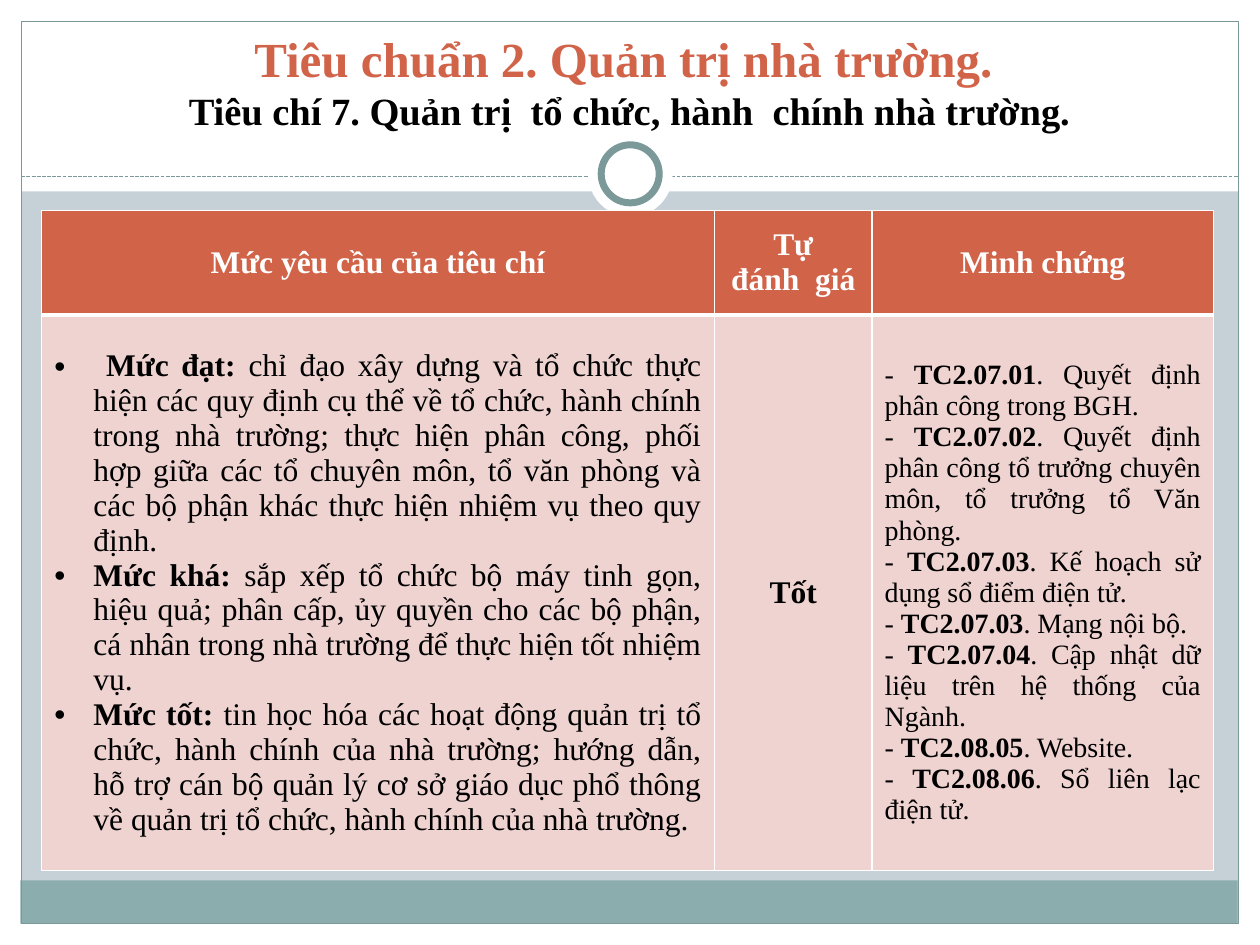
from lxml.etree import SubElement
from pptx import Presentation
from pptx.dml.color import RGBColor
from pptx.enum.dml import MSO_LINE
from pptx.enum.shapes import MSO_CONNECTOR, MSO_SHAPE
from pptx.enum.text import MSO_ANCHOR, MSO_AUTO_SIZE, PP_ALIGN
from pptx.oxml import parse_xml
from pptx.oxml.ns import nsdecls, qn
from pptx.util import Cm, Pt

WHITE = RGBColor(0xFF, 0xFF, 0xFF)
BLACK = RGBColor(0, 0, 0)
ORANGE = RGBColor(0xD1, 0x63, 0x49)
PINK = RGBColor(0xEE, 0xD3, 0xD0)
TEAL = RGBColor(0x8C, 0xAD, 0xAE)
DARK_TEAL = RGBColor(0x7C, 0x99, 0x9A)
BACKGROUND = RGBColor(0xC5, 0xD1, 0xD7)


def add_text(p, text, size=18, bold=False, color=BLACK, align=None):
    r = p.add_run()
    r.text = text
    r.font.name = "Times New Roman"
    r.font.size = Pt(size)
    r.font.bold = bold
    r.font.color.rgb = color
    if align is not None:
        p.alignment = align


def add_shape(s, kind, box, fill=None, line=None, width=0.75):
    """Add a flat preset shape; box is left, top, width, height in cm."""
    sp = s.shapes.add_shape(kind, *[Cm(v) for v in box])
    sp.shadow.inherit = False
    if fill is None:
        sp.fill.background()
    else:
        sp.fill.solid()
        sp.fill.fore_color.rgb = fill
    if line is None:
        sp.line.fill.background()
    else:
        sp.line.color.rgb = line
        sp.line.width = Pt(width)


prs = Presentation()
prs.slide_width, prs.slide_height = Cm(25.4), Cm(19.05)
s = prs.slides.add_slide(prs.slide_layouts[5])
s.background.fill.solid()
s.background.fill.fore_color.rgb = BACKGROUND

# White margins, footer band and frame
for box in [(0, 18.62, 25.4, 0.43), (0, 0, 25.4, 3.86),
            (0, 0, 0.43, 19.05), (24.97, 0, 0.43, 19.05)]:
    add_shape(s, MSO_SHAPE.RECTANGLE, box, fill=WHITE)
add_shape(s, MSO_SHAPE.RECTANGLE, (0.41, 17.75, 24.54, 0.87), fill=TEAL)
add_shape(s, MSO_SHAPE.RECTANGLE, (0.43, 0.43, 24.54, 18.19), line=DARK_TEAL)

# Dashed divider with a ring in the middle
divider = s.shapes.add_connector(MSO_CONNECTOR.STRAIGHT, Cm(0.43), Cm(3.56), Cm(24.97), Cm(3.56))
divider.line.color.rgb = DARK_TEAL
divider.line.width = Pt(0.75)
divider.line.dash_style = MSO_LINE.SQUARE_DOT
SubElement(divider._element.spPr, qn("a:effectLst"))
add_shape(s, MSO_SHAPE.OVAL, (11.86, 2.67, 1.7, 1.7), fill=WHITE)
add_shape(s, MSO_SHAPE.OVAL, (12.12, 2.92, 1.17, 1.17), fill=WHITE, line=DARK_TEAL, width=4)

# Title, brought in front of the white header
title = s.shapes.title
s.shapes._spTree.append(title._element)
title.left, title.top, title.width, title.height = Cm(0.84), Cm(0.08), Cm(23.7), Cm(2.74)
tf = title.text_frame
tf.auto_size = MSO_AUTO_SIZE.NONE
tf.vertical_anchor = MSO_ANCHOR.BOTTOM
p = tf.paragraphs[0]
add_text(p, "Tiêu chuẩn 2. Quản trị nhà trường. ", size=28, bold=True, color=ORANGE,
         align=PP_ALIGN.CENTER)
p.add_line_break()
add_text(p, "Tiêu chí 7. Quản trị  tổ chức, hành  chính nhà trường.", size=22, bold=True)

# Table: each cell is a list of paragraphs
HEADERS = [["Mức yêu cầu của tiêu chí"], ["Tự", "đánh  giá"], ["Minh chứng"]]
LEVELS = [
    (" Mức đạt: ", "chỉ đạo xây dựng và tổ chức thực hiện các quy định cụ thể về tổ chức, "
     "hành chính trong nhà trường; thực hiện phân công, phối hợp giữa các tổ chuyên môn, "
     "tổ văn phòng và các bộ phận khác thực hiện nhiệm vụ theo quy định."),
    ("Mức khá: ", "sắp xếp tổ chức bộ máy tinh gọn, hiệu quả; phân cấp, ủy quyền cho các "
     "bộ phận, cá nhân trong nhà trường để thực hiện tốt nhiệm vụ."),
    ("Mức tốt: ", "tin học hóa các hoạt động quản trị tổ chức, hành chính của nhà trường; "
     "hướng dẫn, hỗ trợ cán bộ quản lý cơ sở giáo dục phổ thông về quản trị tổ chức, "
     "hành chính của nhà trường."),
]
EVIDENCE = [
    ("TC2.07.01", "Quyết định phân công trong BGH."),
    ("TC2.07.02", "Quyết định phân công tổ trưởng chuyên môn, tổ trưởng tổ Văn phòng."),
    ("TC2.07.03", "Kế hoạch sử dụng sổ điểm điện tử."),
    ("TC2.07.03", "Mạng nội bộ."),
    ("TC2.07.04", "Cập nhật dữ liệu trên hệ thống của Ngành."),
    ("TC2.08.05", "Website."),
    ("TC2.08.06", "Sổ liên lạc điện tử."),
]

table = s.shapes.add_table(2, 3, Cm(0.84), Cm(4.24), Cm(23.62), Cm(13.33)).table
for column, width in zip(table.columns, (13.56, 3.18, 6.88)):
    column.width = Cm(width)
for row, height in zip(table.rows, (2.11, 11.2)):
    row.height = Cm(height)

for i, row in enumerate(table.rows):
    thick_side = "T" if i else "B"
    for cell in row.cells:
        cell.vertical_anchor = MSO_ANCHOR.MIDDLE
        for side in "LRTB":
            width = Pt(3 if side == thick_side else 1)
            cell._tc.get_or_add_tcPr().append(parse_xml(
                f'<a:ln{side} {nsdecls("a")} w="{width}"><a:solidFill>'
                f'<a:srgbClr val="{WHITE}"/></a:solidFill></a:ln{side}>'))
        cell.fill.solid()
        cell.fill.fore_color.rgb = PINK if i else ORANGE

for cell, lines in zip(table.rows[0].cells, HEADERS):
    tf = cell.text_frame
    for i, text in enumerate(lines):
        p = tf.add_paragraph() if i else tf.paragraphs[0]
        add_text(p, text, bold=True, color=WHITE, align=PP_ALIGN.CENTER)

tf = table.cell(1, 0).text_frame
for i, (level, text) in enumerate(LEVELS):
    p = tf.add_paragraph() if i else tf.paragraphs[0]
    add_text(p, level, bold=True, align=PP_ALIGN.JUSTIFY)
    add_text(p, text)
    pPr = p._p.get_or_add_pPr()
    pPr.set("marL", str(Cm(0.79)))
    pPr.set("indent", str(-Cm(0.79)))
    SubElement(pPr, qn("a:buFont"), typeface="Arial")
    SubElement(pPr, qn("a:buChar"), char="•")

add_text(table.cell(1, 1).text_frame.paragraphs[0], "Tốt", bold=True, align=PP_ALIGN.CENTER)

tf = table.cell(1, 2).text_frame
for i, (code, text) in enumerate(EVIDENCE):
    p = tf.add_paragraph() if i else tf.paragraphs[0]
    add_text(p, "- ", size=16, align=PP_ALIGN.JUSTIFY)
    add_text(p, code, size=16, bold=True)
    add_text(p, f". {text}", size=16)

prs.save("out.pptx")
